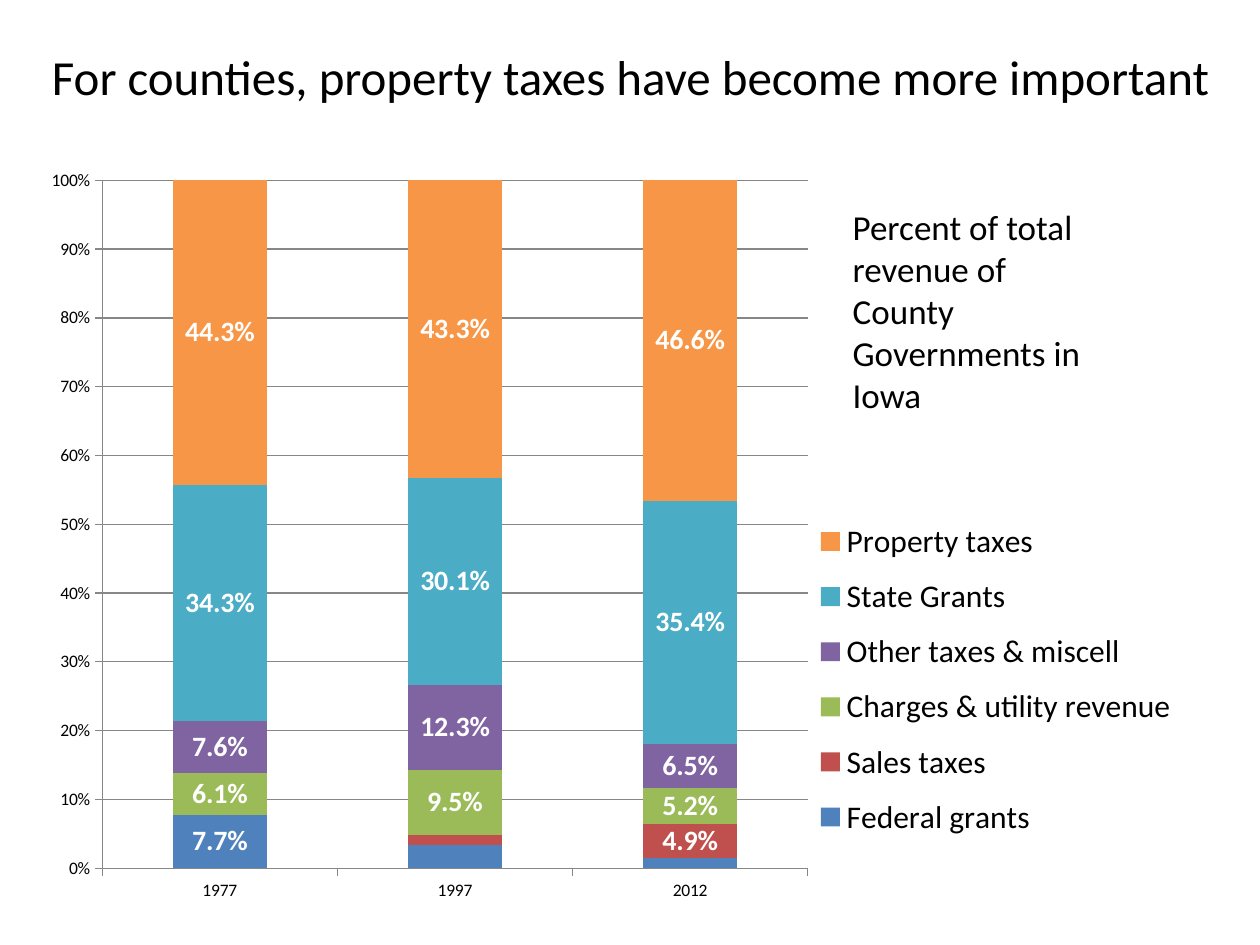
import pptx
import pptx.chart.data
import pptx.dml.color
import pptx.enum.chart
import pptx.enum.text
import pptx.oxml
import pptx.oxml.ns
import pptx.util
from pptx.util import Cm

RGBColor = pptx.dml.color.RGBColor
BLACK = RGBColor(0x00, 0x00, 0x00)
WHITE = RGBColor(0xFF, 0xFF, 0xFF)
GREY = RGBColor(0x87, 0x87, 0x87)
BLUE = RGBColor(0x4F, 0x81, 0xBD)
RED = RGBColor(0xC0, 0x50, 0x4D)
GREEN = RGBColor(0x9B, 0xBB, 0x59)
PURPLE = RGBColor(0x80, 0x64, 0xA2)
AQUA = RGBColor(0x4B, 0xAC, 0xC6)
ORANGE = RGBColor(0xF7, 0x96, 0x46)
FONT = "Calibri"

YEARS = ["1977", "1997", "2012"]
# Name, shares by year, colour, indexes of the labelled years
REVENUES = [
    ("Federal grants", (0.077, 0.033, 0.015), BLUE, [0]),
    ("Sales taxes", (0, 0.015, 0.049), RED, [2]),
    ("Charges & utility revenue", (0.061, 0.095, 0.052), GREEN, [0, 1, 2]),
    ("Other taxes & miscell", (0.076, 0.123, 0.065), PURPLE, [0, 1, 2]),
    ("State Grants", (0.343, 0.301, 0.354), AQUA, [0, 1, 2]),
    ("Property taxes", (0.443, 0.433, 0.466), ORANGE, [0, 1, 2]),
]


def format_font(font, size, color=BLACK, bold=False):
    font.name = FONT
    font.size = pptx.util.Pt(size)
    font.bold = bold
    font.color.rgb = color


def add_text(page, text, left, top, width, height, *, size, align, anchor):
    box = page.shapes.add_textbox(Cm(left), Cm(top), Cm(width), Cm(height))
    frame = box.text_frame
    frame.word_wrap = True
    frame.vertical_anchor = anchor
    para = frame.paragraphs[0]
    para.alignment = align
    span = para.add_run()
    span.text = text
    format_font(span.font, size)


def set_layout(parent, index, x, y, w, h, inner=False):
    """Place a chart part by fractions of the chart's width and height."""
    old = parent.find(pptx.oxml.ns.qn("c:layout"))
    if old is not None:
        parent.remove(old)
    target = '<c:layoutTarget val="inner"/>' if inner else ""
    sizes = "".join(f'<c:{key} val="{value}"/>'
                    for key, value in zip("xywh", (x, y, w, h)))
    parent.insert(index, pptx.oxml.parse_xml(
        f'<c:layout {pptx.oxml.ns.nsdecls("c")}><c:manualLayout>{target}'
        '<c:xMode val="edge"/><c:yMode val="edge"/>'
        f'{sizes}</c:manualLayout></c:layout>'))


def format_axis(axis):
    axis.major_tick_mark = pptx.enum.chart.XL_TICK_MARK.OUTSIDE
    axis.minor_tick_mark = pptx.enum.chart.XL_TICK_MARK.NONE
    format_line(axis.format.line)
    format_font(axis.tick_labels.font, 10)


def format_line(line):
    line.color.rgb = GREY
    line.width = pptx.util.Pt(0.75)


def format_series(series, color, labelled):
    series.format.fill.solid()
    series.format.fill.fore_color.rgb = color
    series.invert_if_negative = False
    if len(labelled) == len(YEARS):
        labels = series.data_labels
        labels.show_value = True
        format_font(labels.font, 16, WHITE, bold=True)
        return
    series.data_labels.show_value = False
    for index in labelled:
        format_font(series.points[index].data_label.font, 16, WHITE, bold=True)


def add_revenue_chart(page):
    data = pptx.chart.data.CategoryChartData(number_format="0.0%")
    data.categories = YEARS
    for name, shares, _, _ in REVENUES:
        data.add_series(name, shares)
    chart = page.shapes.add_chart(
        pptx.enum.chart.XL_CHART_TYPE.COLUMN_STACKED_100,
        Cm(0.64), Cm(3.18), Cm(23.7), Cm(15.24), data).chart
    format_font(chart.font, 10)
    chart.has_title = False

    plot = chart.plots[0]
    plot.gap_width = 150
    plot.overlap = 100
    plot.vary_by_categories = False
    for series, (_, _, color, labelled) in zip(plot.series, REVENUES):
        format_series(series, color, labelled)

    format_axis(chart.category_axis)
    shares_axis = chart.value_axis
    format_axis(shares_axis)
    shares_axis.minimum_scale = 0
    shares_axis.maximum_scale = 1
    shares_axis.major_unit = 0.1
    shares_axis.tick_labels.number_format = "0%"
    shares_axis.tick_labels.number_format_is_linked = False
    shares_axis.has_major_gridlines = True
    format_line(shares_axis.major_gridlines.format.line)

    chart.has_legend = True
    legend = chart.legend
    legend.position = pptx.enum.chart.XL_LEGEND_POSITION.RIGHT
    legend.include_in_layout = False
    format_font(legend.font, 18)
    plot_area = chart.element.chart.plotArea
    set_layout(plot_area, 0, 0.06, 0.03, 0.6, 0.91, inner=True)
    set_layout(chart.element.chart.find(pptx.oxml.ns.qn("c:legend")), 1,
               0.66, 0.46, 0.32, 0.46)


def main():
    deck = pptx.Presentation()
    deck.slide_width = Cm(25.4)
    deck.slide_height = Cm(19.05)
    page = deck.slides.add_slide(deck.slide_layouts[6])
    add_text(page, "For counties, property taxes have become more important",
             0.43, 0.43, 24.56, 2.21, size=28,
             align=pptx.enum.text.PP_ALIGN.CENTER,
             anchor=pptx.enum.text.MSO_ANCHOR.MIDDLE)
    add_revenue_chart(page)
    add_text(page, "Percent of total revenue of County Governments in Iowa",
             16.94, 4.01, 5.51, 4.52, size=20,
             align=pptx.enum.text.PP_ALIGN.LEFT,
             anchor=pptx.enum.text.MSO_ANCHOR.TOP)
    deck.save("out.pptx")


if __name__ == "__main__":
    main()
